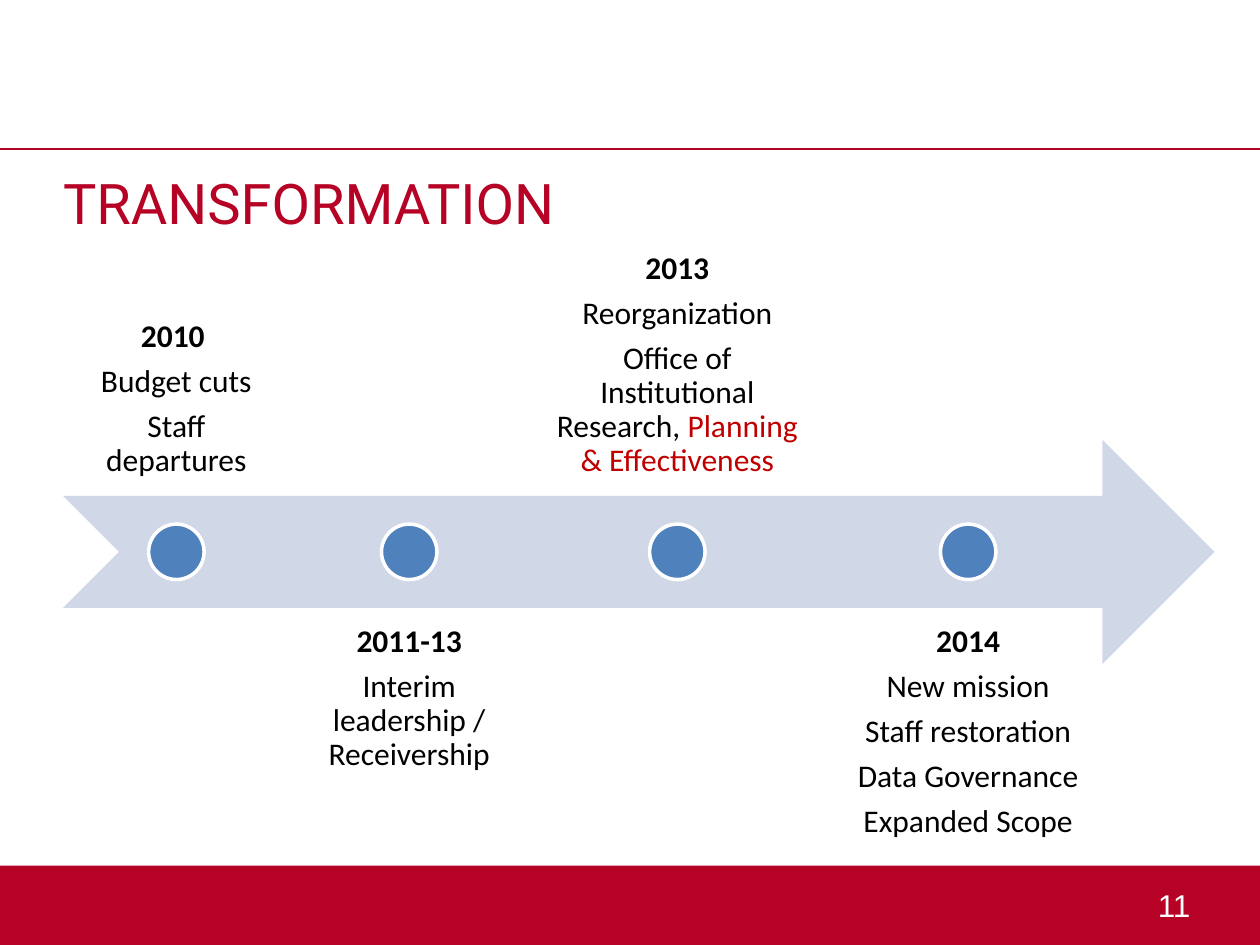
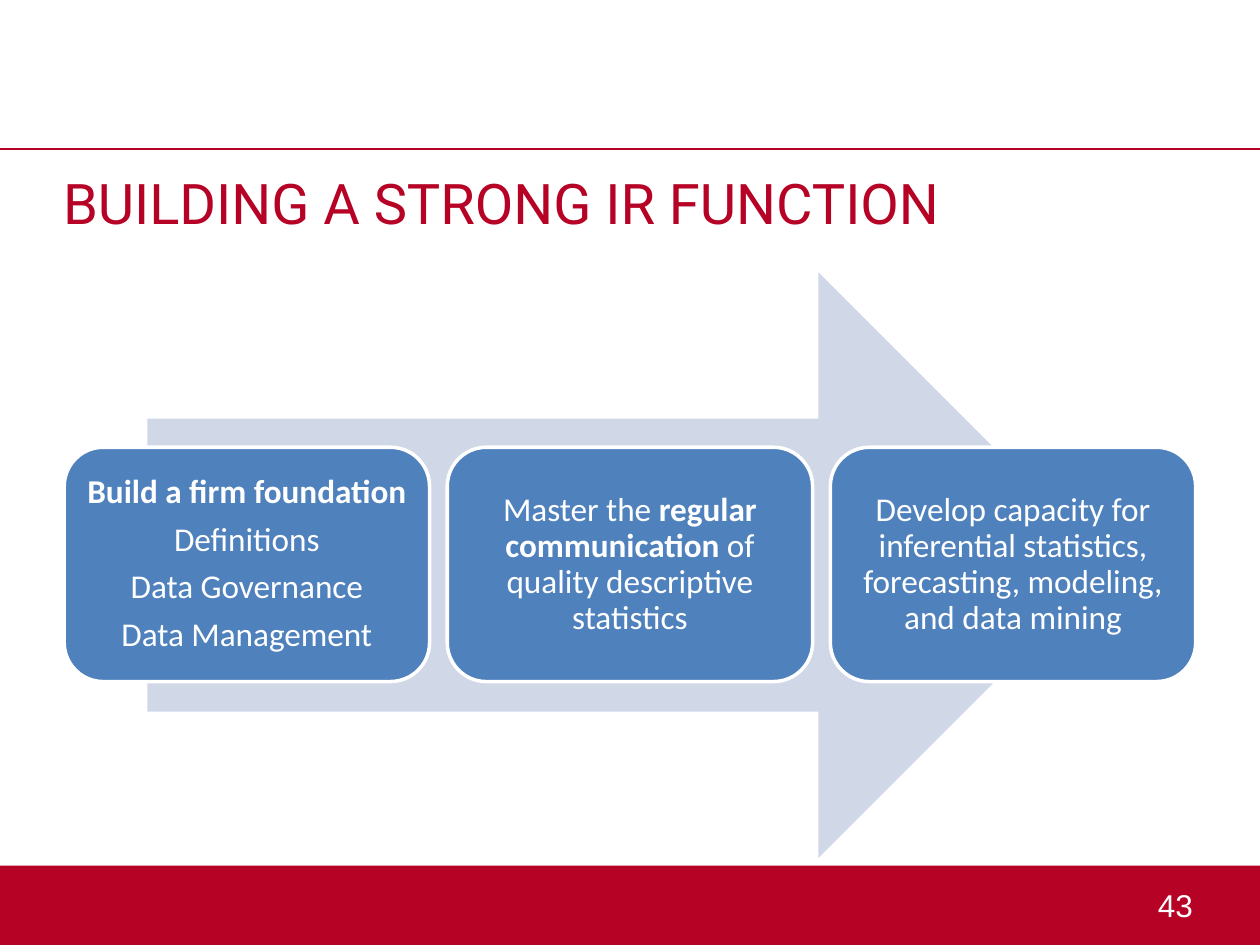
from lxml.etree import SubElement
from pptx import Presentation
from pptx.dml.color import RGBColor
from pptx.enum.shapes import MSO_CONNECTOR as Connector, MSO_SHAPE as Shape
from pptx.enum.text import MSO_ANCHOR as Anchor, MSO_AUTO_SIZE as AutoSize, PP_ALIGN as Align
from pptx.oxml.ns import qn
from pptx.util import Inches, Pt

CRIMSON = RGBColor(0xB6, 0x02, 0x25)
RED = RGBColor(0xC0, 0x00, 0x00)
BLUE = RGBColor(0x4F, 0x81, 0xBD)
PALE_BLUE = RGBColor(0xD0, 0xD8, 0xE8)
WHITE = RGBColor(0xFF, 0xFF, 0xFF)
BLACK = RGBColor(0x00, 0x00, 0x00)

SLIDE_WIDTH, SLIDE_HEIGHT = Inches(10), Inches(7.5)
COLUMNS, ROWS = 100, 75
MARGIN = 5
SPACE_AFTER_SHARE = 0.35

MILESTONES = [
    (18, [[("2010 ", {"bold": True})], "Budget cuts", "Staff departures"]),
    (17.4, [[("2011-13", {"bold": True})], "Interim leadership / Receivership"]),
    (23.6, [[("2013", {"bold": True})], "Reorganization",
            [("Office of Institutional Research, ", {}),
             ("Planning & Effectiveness", {"color": RED})]]),
    (21, [[("2014", {"bold": True})], "New mission", "Staff restoration",
          "Data Governance", "Expanded Scope"]),
]

STAGES = [
    [[("Build a firm foundation", {"bold": True})], "Definitions",
     "Data Governance", "Data Management"],
    [[("Master the ", {}), ("regular communication ", {"bold": True}),
      ("of quality descriptive statistics", {})]],
    ["Develop capacity for inferential statistics, forecasting, modeling, and data mining"],
]


def across(columns):
    return int(SLIDE_WIDTH * columns / COLUMNS)


def down(rows):
    return int(SLIDE_HEIGHT * rows / ROWS)


def area(column, row, columns, rows):
    return across(column), down(row), across(columns), down(rows)


def write(holder, paragraphs, size, color, font="Calibri", align=Align.CENTER,
          anchor=Anchor.TOP, insets=(1, 0.5), line_spacing=None, after_share=0):
    frame = holder.text_frame
    frame.auto_size = AutoSize.NONE
    frame.word_wrap = True
    frame.vertical_anchor = anchor
    frame.margin_left = frame.margin_right = across(insets[0])
    frame.margin_top = frame.margin_bottom = down(insets[1])
    for index, content in enumerate(paragraphs):
        paragraph = frame.add_paragraph() if index else frame.paragraphs[0]
        paragraph.alignment = align
        paragraph.space_before = Pt(0)
        paragraph.space_after = Pt(size * after_share)
        paragraph.line_spacing = line_spacing
        pieces = [(content, {})] if isinstance(content, str) else content
        for words, emphasis in pieces:
            run = paragraph.add_run()
            run.text = words
            run.font.name = font
            run.font.size = Pt(size)
            run.font.bold = emphasis.get("bold", False)
            run.font.color.rgb = emphasis.get("color", color)


def add_figure(slide, preset, place, fill, outline=None):
    figure = slide.shapes.add_shape(preset, *place)
    figure.shadow.inherit = False
    figure.fill.solid()
    figure.fill.fore_color.rgb = fill
    if outline is None:
        figure.line.fill.background()
    else:
        figure.line.color.rgb = outline
        figure.line.width = Pt(2)
    return figure


def add_header_rule(slide):
    height = down(11.83)
    rule = slide.shapes.add_connector(Connector.STRAIGHT, 0, height, SLIDE_WIDTH, height)
    rule.line.color.rgb = CRIMSON
    rule.line.width = Pt(1)
    SubElement(rule._element.spPr, qn("a:effectLst"))


def add_titled_slide(deck, heading, number):
    slide = deck.slides.add_slide(deck.slide_layouts[5])
    add_figure(slide, Shape.RECTANGLE, area(0, 68.7, COLUMNS, 6.3), CRIMSON)
    add_header_rule(slide)
    page_number = slide.shapes.add_textbox(*area(90.9, 69.8, 6.1, 4))
    write(page_number, [number], 18, WHITE, font="Arial", align=Align.LEFT)
    title = slide.shapes.title
    title.left, title.top, title.width, title.height = area(MARGIN, 12.9, 90, 8.7)
    write(title, [heading], 32, CRIMSON, font="Roboto", align=Align.LEFT, insets=(0, 0.5))
    return slide


def add_timeline(slide):
    arrow_top, arrow_height, label_height = 34.9, 17.8, 17.8
    gap, dot_size = 0.78, 4.4
    add_figure(slide, Shape.NOTCHED_RIGHT_ARROW,
               area(MARGIN, arrow_top, 91.4, arrow_height), PALE_BLUE)
    column = MARGIN
    dot_top = arrow_top + (arrow_height - dot_size) / 2
    for index, (width, lines) in enumerate(MILESTONES):
        below = index % 2
        label = slide.shapes.add_textbox(
            *area(column, 48.2 if below else 21.6, width, label_height))
        write(label, lines, 18, BLACK, anchor=Anchor.TOP if below else Anchor.BOTTOM,
              insets=(1.4, 1.4), line_spacing=0.9, after_share=SPACE_AFTER_SHARE)
        add_figure(slide, Shape.OVAL,
                   area(column + (width - dot_size) / 2, dot_top, dot_size, dot_size),
                   BLUE, WHITE)
        column += width + gap


def add_stages(slide):
    add_figure(slide, Shape.RIGHT_ARROW, area(11.7, 21.6, 76.5, 46.5), PALE_BLUE)
    first, card_width, gap = 5.1, 29, 1.4
    for index, lines in enumerate(STAGES):
        card = add_figure(slide, Shape.ROUNDED_RECTANGLE,
                          area(first + index * (card_width + gap), 35.5, card_width, 18.6),
                          BLUE, WHITE)
        write(card, lines, 19, WHITE, anchor=Anchor.MIDDLE, insets=(0.8, 0.8),
              line_spacing=0.9, after_share=SPACE_AFTER_SHARE)


def main():
    deck = Presentation()
    deck.slide_width, deck.slide_height = SLIDE_WIDTH, SLIDE_HEIGHT
    add_timeline(add_titled_slide(deck, "TRANSFORMATION", "11"))
    add_stages(add_titled_slide(deck, "BUILDING A STRONG IR FUNCTION", "43"))
    deck.save("out.pptx")


if __name__ == "__main__":
    main()
